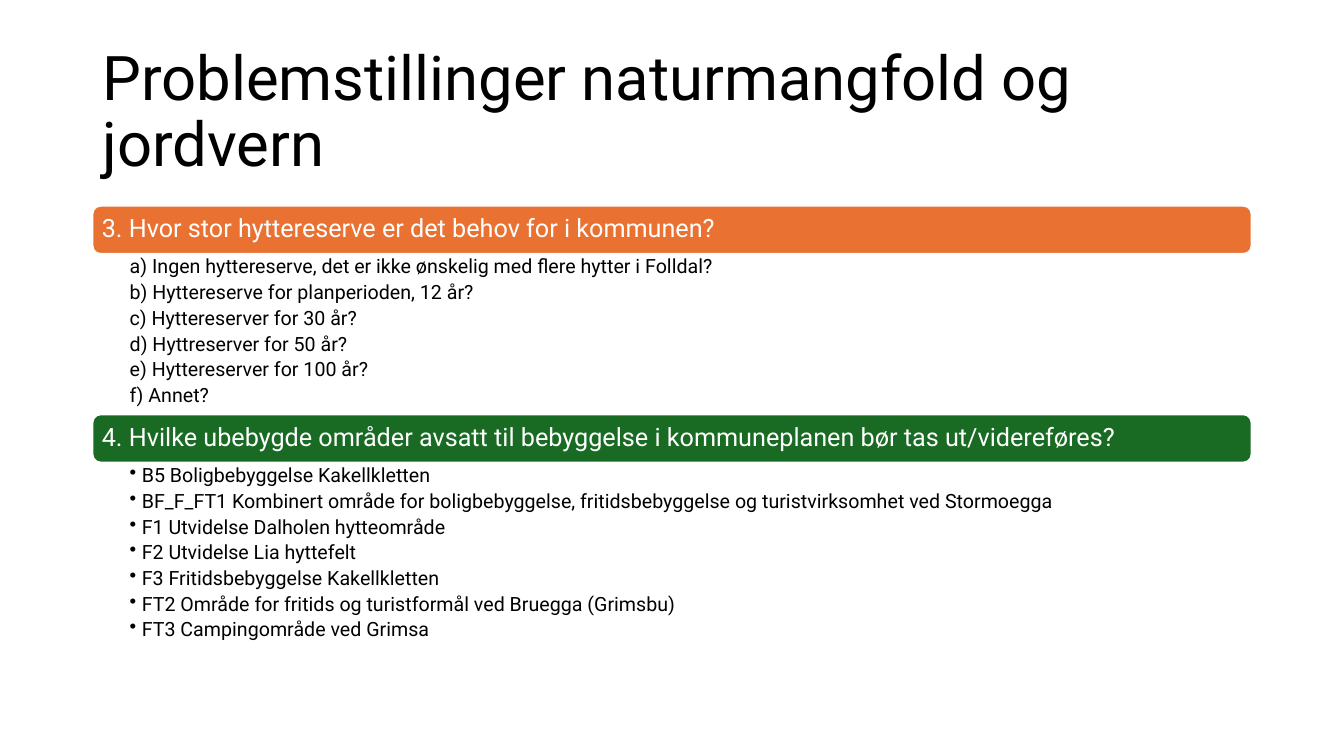
import pptx
import pptx.util
import pptx.dml.color
import pptx.enum.shapes
import pptx.enum.text
import pptx.oxml.ns
from lxml import etree

Pt, Inches = pptx.util.Pt, pptx.util.Inches
RGB = pptx.dml.color.RGBColor.from_string
MIDDLE = pptx.enum.text.MSO_ANCHOR.MIDDLE
TOP = pptx.enum.text.MSO_ANCHOR.TOP

THEME = dict(font="Roboto", black="000000", white="FFFFFF", orange="E97132",
             green="196B24", title=44, heading=18, item=14)

prs = pptx.Presentation()
prs.slide_width, prs.slide_height = Inches(13.33), Inches(7.5)
s = prs.slides.add_slide(prs.slide_layouts[6])

# Grid: 160 columns by 150 rows
COL, ROW = prs.slide_width / 160, prs.slide_height / 150
LEFT, WIDTH = int(11 * COL), int(138 * COL)
BAR_ROWS = 9.6


def set_frame(tf, anchor, left, top, right, bottom):
    frame = dict(word_wrap=True, vertical_anchor=anchor,
                 margin_left=Inches(left), margin_top=Inches(top),
                 margin_right=Inches(right), margin_bottom=Inches(bottom))
    for name, value in frame.items():
        setattr(tf, name, value)


def write(p, text, size, color, space_after=0):
    layout = dict(line_spacing=0.9, space_after=Pt(space_after),
                  alignment=pptx.enum.text.PP_ALIGN.LEFT)
    for name, value in layout.items():
        setattr(p, name, value)
    r = p.add_run()
    r.text = text
    r.font.name, r.font.size = THEME["font"], Pt(THEME[size])
    r.font.color.rgb = RGB(THEME[color])


# Title
title = s.shapes.add_textbox(LEFT, int(8 * ROW), WIDTH, int(29 * ROW))
set_frame(title.text_frame, MIDDLE, 0.1, 0.05, 0.1, 0.05)
write(title.text_frame.paragraphs[0],
      "Problemstillinger naturmangfold og jordvern", "title", "black")

# Questions: heading, bar colour, rows for the list, bullet, items
LETTERS = ("a:buAutoNum", {"type": "alphaLcParenR"})
DOTS = ("a:buChar", {"char": "•"})
questions = [
    ("3. Hvor stor hyttereserve er det behov for i kommunen?",
     "orange", 31.8, LETTERS, [
         " Ingen hyttereserve, det er ikke ønskelig med flere hytter i Folldal?",
         " Hyttereserve for planperioden, 12 år?",
         " Hyttereserver for 30 år?",
         " Hyttreserver for 50 år?",
         " Hyttereserver for 100 år?",
         " Annet?"]),
    ("4. Hvilke ubebygde områder avsatt til bebyggelse i kommuneplanen "
     "bør tas ut/videreføres?",
     "green", 42.4, DOTS, [
         "B5 Boligbebyggelse Kakellkletten",
         "BF_F_FT1 Kombinert område for boligbebyggelse, fritidsbebyggelse "
         "og turistvirksomhet ved Stormoegga",
         "F1 Utvidelse Dalholen hytteområde",
         "F2 Utvidelse Lia hyttefelt",
         "F3 Fritidsbebyggelse Kakellkletten",
         "FT2 Område for fritids og turistformål ved Bruegga (Grimsbu)",
         "FT3 Campingområde ved Grimsa"]),
]

row = 40.8
for heading, color, list_rows, (tag, attributes), items in questions:
    # Heading bar
    bar = s.shapes.add_shape(pptx.enum.shapes.MSO_SHAPE.ROUNDED_RECTANGLE,
                             LEFT, int(row * ROW), WIDTH, int(BAR_ROWS * ROW))
    bar.shadow.inherit = False
    bar.fill.solid()
    bar.fill.fore_color.rgb = RGB(THEME[color])
    bar.line.color.rgb = RGB(THEME["white"])
    bar.line.width = Pt(1.5)
    set_frame(bar.text_frame, MIDDLE, 0.07, 0.07, 0.07, 0.07)
    write(bar.text_frame.paragraphs[0], heading, "heading", "white")
    row += BAR_ROWS

    # List below the bar
    box = s.shapes.add_textbox(LEFT, int(row * ROW), WIDTH, int(list_rows * ROW))
    tf = box.text_frame
    set_frame(tf, TOP, 0.37, 0.03, 0.14, 0.03)
    for i, item in enumerate(items):
        p = tf.add_paragraph() if i else tf.paragraphs[0]
        p.level = 1
        pPr = p._p.get_or_add_pPr()
        pPr.set("marL", str(Inches(0.12)))
        pPr.set("indent", str(-Inches(0.12)))
        etree.SubElement(pPr, pptx.oxml.ns.qn(tag), attributes)
        write(p, item, "item", "black", space_after=3.2)
    row += list_rows

prs.save("out.pptx")
